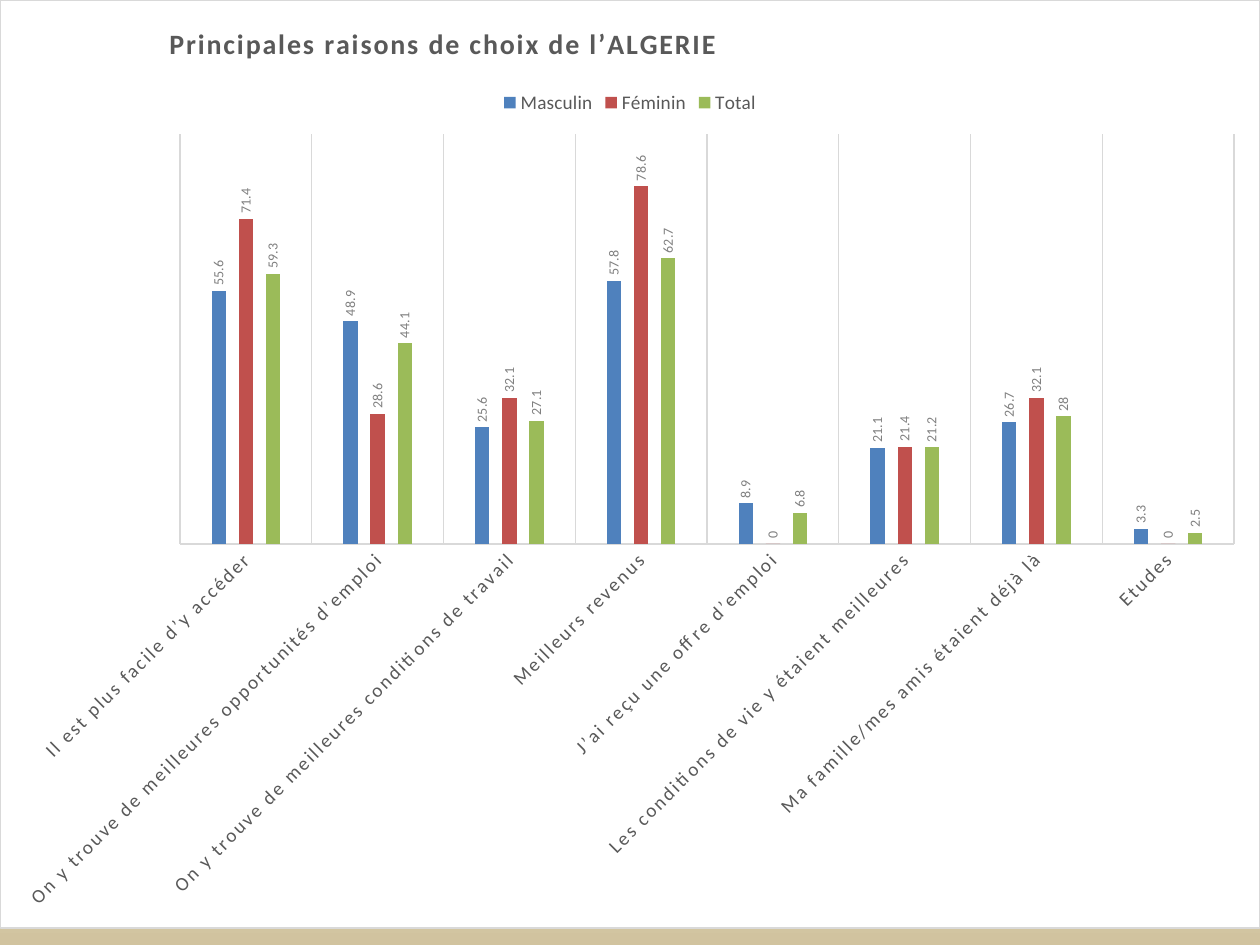
import copy
from dataclasses import dataclass

import pptx
import pptx.chart.data
import pptx.dml.color
import pptx.enum.chart
import pptx.oxml
import pptx.oxml.ns
import pptx.util

RGBColor = pptx.dml.color.RGBColor
Cm = pptx.util.Cm
Pt = pptx.util.Pt
qn = pptx.oxml.ns.qn

FONT = "Calibri"
LETTER_SPACING = "120"
BLACK = RGBColor(0x00, 0x00, 0x00)
TEXT_GREY = RGBColor(0x59, 0x59, 0x59)
LABEL_GREY = RGBColor(0x80, 0x80, 0x80)
LINE_GREY = RGBColor(0xD9, 0xD9, 0xD9)
WHITE = RGBColor(0xFF, 0xFF, 0xFF)
BLUE = RGBColor(0x4F, 0x81, 0xBD)
RED = RGBColor(0xC0, 0x50, 0x4D)
GREEN = RGBColor(0x9B, 0xBB, 0x59)
BACKGROUND_STOPS = (
    (0, RGBColor(0xFF, 0xEF, 0xD1)),
    (65, RGBColor(0xF0, 0xEB, 0xD5)),
    (100, RGBColor(0xD1, 0xC3, 0x9F)),
)

TITLE = "Principales raisons de choix de l’ALGERIE"
REASONS = (
    "Il est plus facile d’y accéder",
    "On y trouve de meilleures opportunités d’emploi",
    "On y trouve de meilleures conditions de travail",
    "Meilleurs revenus",
    "J’ai reçu une offre d’emploi",
    "Les conditions de vie y étaient meilleures",
    "Ma famille/mes amis étaient déjà là",
    "Etudes",
)


@dataclass(frozen=True)
class Group:
    name: str
    color: RGBColor
    values: tuple[float, ...]


GROUPS = (
    Group("Masculin", BLUE, (55.6, 48.9, 25.6, 57.8, 8.9, 21.1, 26.7, 3.3)),
    Group("Féminin", RED, (71.4, 28.6, 32.1, 78.6, 0, 21.4, 32.1, 0)),
    Group("Total", GREEN, (59.3, 44.1, 27.1, 62.7, 6.8, 21.2, 28, 2.5)),
)


def set_font(font, size: float, color: RGBColor, bold: bool = False) -> None:
    font.name = FONT
    font.size = Pt(size)
    font.bold = bold
    font.color.rgb = color


def set_line(line, color: RGBColor) -> None:
    line.color.rgb = color
    line.width = Pt(0.75)


def rotate_text(element, degrees: int) -> None:
    body = element.find(qn("c:txPr")).find(qn("a:bodyPr"))
    body.set("rot", str(degrees * 60000))
    body.set("vert", "horz")


def place(element, index: int, inner: bool = False, **percents: float) -> None:
    """Give a chart part a manual layout in percent of the chart area."""
    for old in element.findall(qn("c:layout")):
        element.remove(old)
    target = '<c:layoutTarget val="inner"/>' if inner else ""
    modes = "".join(f'<c:{key}Mode val="edge"/>' for key in "xy")
    sizes = "".join(
        f'<c:{key} val="{value / 100:.4f}"/>' for key, value in percents.items()
    )
    layout = pptx.oxml.parse_xml(
        f'<c:layout {pptx.oxml.ns.nsdecls("c")}><c:manualLayout>'
        f"{target}{modes}{sizes}</c:manualLayout></c:layout>"
    )
    element.insert(index, layout)


def paint_background(page) -> None:
    fill = page.background.fill
    fill.gradient()
    fill.gradient_angle = 270
    first = fill.gradient_stops[0]._gs
    first.getparent().append(copy.deepcopy(first))
    for stop, (percent, color) in zip(fill.gradient_stops, BACKGROUND_STOPS):
        stop.position = percent / 100
        stop.color.rgb = color


def frame_chart(chart) -> None:
    """Fill and outline the chart area."""
    properties = pptx.oxml.parse_xml(
        f'<c:spPr {pptx.oxml.ns.nsdecls("c", "a")}>'
        f'<a:solidFill><a:srgbClr val="{WHITE}"/></a:solidFill>'
        f'<a:ln w="{Pt(0.75)}"><a:solidFill><a:srgbClr val="{LINE_GREY}"/>'
        "</a:solidFill></a:ln></c:spPr>"
    )
    chart._chartSpace.find(qn("c:txPr")).addprevious(properties)


def add_title(chart) -> None:
    chart.has_title = True
    title = chart.chart_title
    span = title.text_frame.paragraphs[0].add_run()
    span.text = TITLE
    set_font(span.font, 16, TEXT_GREY, bold=True)
    span.font._element.set("spc", LETTER_SPACING)
    title.include_in_layout = False
    place(title._element, 1, x=13, y=2.1)


def format_axes(chart) -> None:
    reasons = chart.category_axis
    reasons.major_tick_mark = pptx.enum.chart.XL_TICK_MARK.NONE
    reasons.has_major_gridlines = True
    set_line(reasons.major_gridlines.format.line, LINE_GREY)
    set_line(reasons.format.line, LINE_GREY)
    set_font(reasons.tick_labels.font, 11, TEXT_GREY)
    reasons.tick_labels.font._element.set("spc", LETTER_SPACING)
    rotate_text(reasons._element, -45)
    scale = chart.value_axis
    scale.minimum_scale = 0
    scale.maximum_scale = 90
    scale.has_major_gridlines = False
    scale.visible = False


def format_series(series, group: Group) -> None:
    series.format.fill.solid()
    series.format.fill.fore_color.rgb = group.color
    series.invert_if_negative = False
    labels = series.data_labels
    labels.show_value = True
    labels.position = pptx.enum.chart.XL_LABEL_POSITION.OUTSIDE_END
    set_font(labels.font, 8, LABEL_GREY)
    rotate_text(labels._element, -90)


def add_reasons_chart(page) -> None:
    data = pptx.chart.data.CategoryChartData()
    data.categories = REASONS
    for group in GROUPS:
        data.add_series(group.name, group.values)
    chart = page.shapes.add_chart(
        pptx.enum.chart.XL_CHART_TYPE.COLUMN_CLUSTERED,
        Cm(0), Cm(0), Cm(25.4), Cm(18.72), data,
    ).chart
    set_font(chart.font, 10, BLACK)
    frame_chart(chart)
    add_title(chart)
    chart.has_legend = True
    chart.legend.position = pptx.enum.chart.XL_LEGEND_POSITION.TOP
    chart.legend.include_in_layout = False
    set_font(chart.legend.font, 11, TEXT_GREY)
    format_axes(chart)
    plot = chart.plots[0]
    plot.gap_width = 444
    plot.overlap = -90
    plot.vary_by_categories = False
    for series, group in zip(plot.series, GROUPS):
        format_series(series, group)
    plot_area = chart._chartSpace.chart.plotArea
    place(plot_area, 0, inner=True, x=14.25, y=14.4, w=83.75, h=44.2)


def main() -> None:
    deck = pptx.Presentation()
    deck.slide_width = Cm(25.4)
    deck.slide_height = Cm(19.05)
    page = deck.slides.add_slide(deck.slide_layouts[6])
    paint_background(page)
    add_reasons_chart(page)
    deck.save("out.pptx")


if __name__ == "__main__":
    main()
